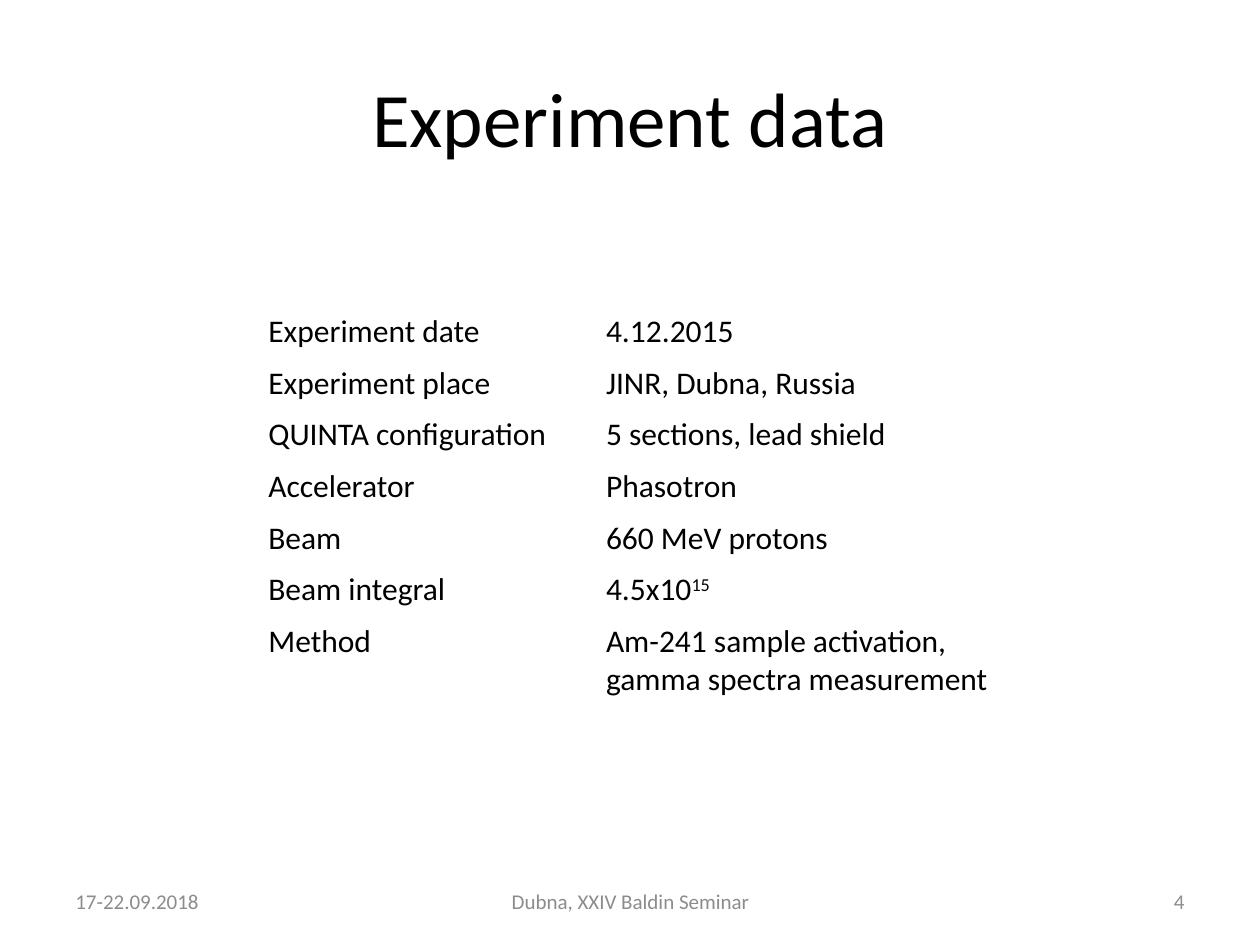
import pptx
import pptx.util
import pptx.dml.color
import pptx.enum.text

Inches = pptx.util.Inches
ALIGN = pptx.enum.text.PP_ALIGN
ANCHOR = pptx.enum.text.MSO_ANCHOR
BLACK = pptx.dml.color.RGBColor(0x00, 0x00, 0x00)
GRAY = pptx.dml.color.RGBColor(0x8C, 0x8C, 0x8C)
FONT = "Calibri"
ROWS = [
    ("Experiment date", "4.12.2015"),
    ("Experiment place", "JINR, Dubna, Russia"),
    ("QUINTA configuration", "5 sections, lead shield"),
    ("Accelerator", "Phasotron"),
    ("Beam", "660 MeV protons"),
    ("Beam integral", "4.5x10"),
    ("Method", "Am-241 sample activation,\ngamma spectra measurement"),
]
POWER_ROW = 5


def format_text(frame, size, color, align=ALIGN.LEFT):
    """Apply font, size, colour and alignment to every run."""
    for para in frame.paragraphs:
        para.alignment = align
        for run in para.runs:
            run.font.name = FONT
            run.font.size = pptx.util.Pt(size)
            run.font.color.rgb = color


def add_text(slide, text, box, size, color, align):
    """Add a wrapped text box with its text centred vertically."""
    frame = slide.shapes.add_textbox(*map(Inches, box)).text_frame
    frame.word_wrap = True
    frame.vertical_anchor = ANCHOR.MIDDLE
    frame.text = text
    format_text(frame, size, color, align)


def add_power(cell, text):
    """Append a superscript run to a cell."""
    run = cell.text_frame.paragraphs[0].add_run()
    run.text = text
    run.font._element.set("baseline", "30000")


def add_facts(slide):
    """Add the plain table of experiment facts."""
    box = map(Inches, (2.03, 2.43, 6.01, 0.41 * len(ROWS)))
    table = slide.shapes.add_table(len(ROWS), 2, *box).table
    table.first_row = False
    table.horz_banding = False
    for column, width in zip(table.columns, (2.68, 3.33)):
        column.width = Inches(width)
    for row, texts in zip(table.rows, ROWS):
        row.height = Inches(0.41)
        for cell, text in zip(row.cells, texts):
            cell.fill.background()
            cell.text_frame.text = text
    add_power(table.cell(POWER_ROW, 1), "15")
    for cell in table.iter_cells():
        format_text(cell.text_frame, 18, BLACK)


def add_footer(slide):
    """Add the date, event and page number along the bottom."""
    parts = [
        ("17-22.09.2018", 0.5, 2.33, ALIGN.LEFT),
        ("Dubna, XXIV Baldin Seminar", 3.42, 3.17, ALIGN.CENTER),
        ("4", 7.17, 2.33, ALIGN.RIGHT),
    ]
    for text, left, width, align in parts:
        add_text(slide, text, (left, 6.95, width, 0.4), 12, GRAY, align)


def main():
    """Build and save the slide."""
    deck = pptx.Presentation()
    deck.slide_width = Inches(10)
    deck.slide_height = Inches(7.5)
    slide = deck.slides.add_slide(deck.slide_layouts[6])
    add_text(slide, "Experiment data", (0.5, 0.3, 9, 1.25), 44, BLACK, ALIGN.CENTER)
    add_facts(slide)
    add_footer(slide)
    deck.save("out.pptx")


if __name__ == "__main__":
    main()
